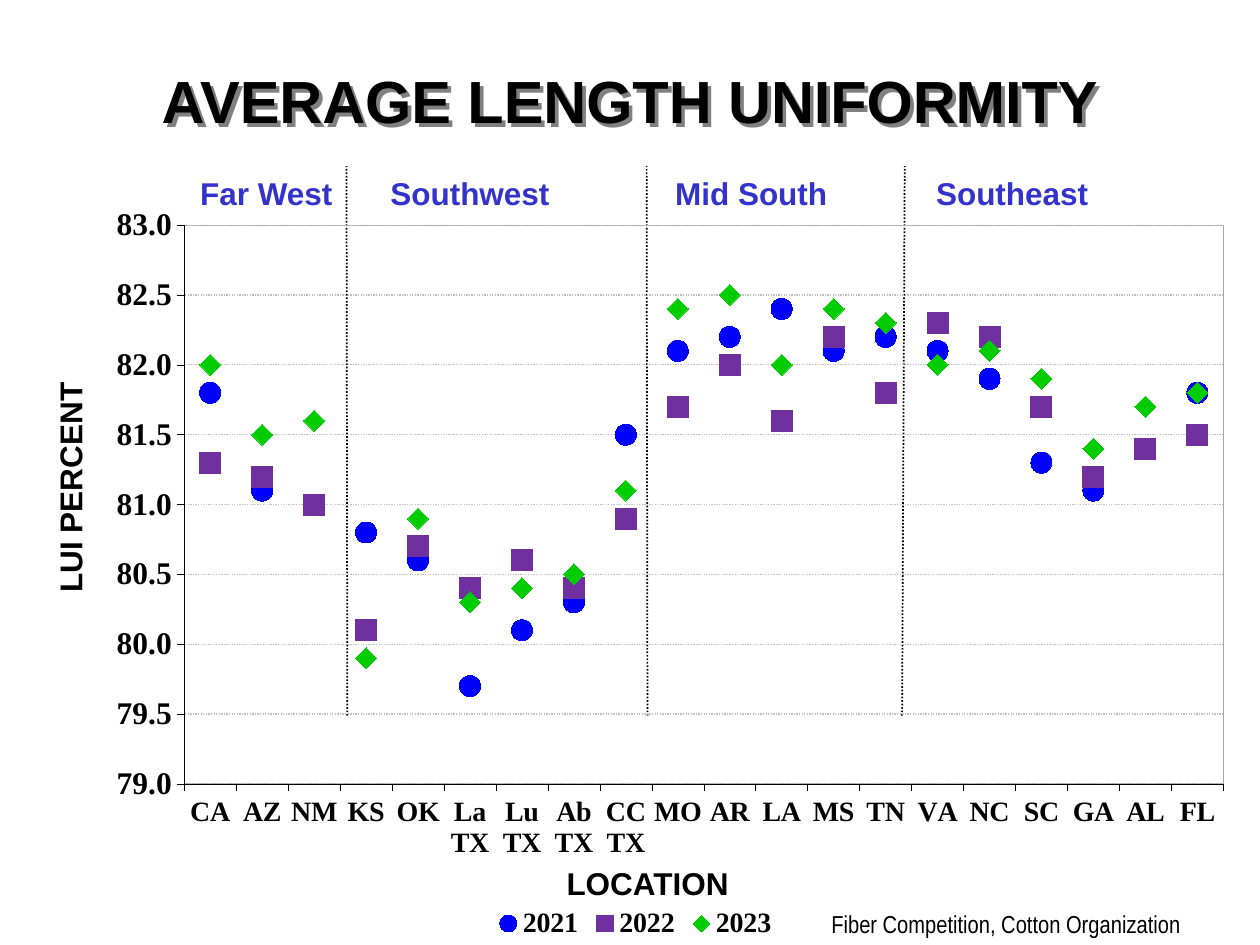
"""Build the average length uniformity slide with its regional marker chart."""
import pptx
import pptx.chart.data
import pptx.dml.color
import pptx.enum.chart
import pptx.enum.dml
import pptx.enum.shapes
import pptx.enum.text
import pptx.oxml
import pptx.util

Pt = pptx.util.Pt
DASH = pptx.enum.dml.MSO_LINE.ROUND_DOT
ALIGN = pptx.enum.text.PP_ALIGN
XL = pptx.enum.chart
NS = ('xmlns:a="http://schemas.openxmlformats.org/drawingml/2006/main" '
      'xmlns:c="http://schemas.openxmlformats.org/drawingml/2006/chart"')

TITLE = "AVERAGE LENGTH UNIFORMITY"
REGIONS = [("Far West", 107.3, 90.7), ("Southwest", 216, 106.6),
           ("Mid South", 378.7, 102.2), ("Southeast", 527.8, 102.2)]
DIVIDERS = [(198.5, 198), (370, 369.5), (515.5, 517)]
AXIS_TITLES = [("LUI PERCENT", -20.2, 267.8, 120.2, 270), ("LOCATION", 323.3, 493.9, 93.6, 0)]
CREDIT = "Fiber Competition, Cotton Organization"
STATES = ["CA", "AZ", "NM", "KS", "OK", "La TX", "Lu TX", "Ab TX", "CC TX", "MO",
          "AR", "LA", "MS", "TN", "VA", "NC", "SC", "GA", "AL", "FL"]
SERIES = [
    ("2021", "CIRCLE", "0000FF",
     [81.8, 81.1, 81, 80.8, 80.6, 79.7, 80.1, 80.3, 81.5, 82.1,
      82.2, 82.4, 82.1, 82.2, 82.1, 81.9, 81.3, 81.1, 81.4, 81.8]),
    ("2022", "SQUARE", "7030A0",
     [81.3, 81.2, 81, 80.1, 80.7, 80.4, 80.6, 80.4, 80.9, 81.7,
      82, 81.6, 82.2, 81.8, 82.3, 82.2, 81.7, 81.2, 81.4, 81.5]),
    ("2023", "DIAMOND", "00CC00",
     [82, 81.5, 81.6, 79.9, 80.9, 80.3, 80.4, 80.5, 81.1, 82.4,
      82.5, 82, 82.4, 82.3, 82, 82.1, 81.9, 81.4, 81.7, 81.8]),
]
PLOT = {"x": 0.114, "y": 0.074, "w": 0.885, "h": 0.719}
LEGEND = {"x": 0.375, "y": 0.945}


def rgb(color):
    return pptx.dml.color.RGBColor.from_string(color)


def xml(text):
    return pptx.oxml.parse_xml(text.replace(">", f" {NS}>", 1))


def set_font(font, size, name, color="000000", bold=True):
    font.size, font.name, font.bold = Pt(size), name, bold
    font.color.rgb = rgb(color)


def set_line(line, color, width, dash=None):
    line.color.rgb = rgb(color)
    line.width = Pt(width)
    if dash:
        line.dash_style = dash


def add_text(slide, text, box, size=18, name="Arial", color="000000",
             bold=True, align=ALIGN.LEFT, wrap=False, inset=True):
    sp = slide.shapes.add_textbox(*map(Pt, box))
    tf = sp.text_frame
    tf.word_wrap = wrap
    if not inset:
        tf.margin_left = tf.margin_right = tf.margin_top = tf.margin_bottom = 0
    p = tf.paragraphs[0]
    p.text, p.alignment = text, align
    set_font(p.font, size, name, color, bold)
    return sp


def add_title(slide):
    sp = slide.shapes.title
    sp.left, sp.top, sp.width, sp.height = Pt(54), Pt(12.2), Pt(612), Pt(90)
    sp.text_frame.vertical_anchor = pptx.enum.text.MSO_ANCHOR.MIDDLE
    p = sp.text_frame.paragraphs[0]
    p.text, p.alignment = TITLE, ALIGN.CENTER
    set_font(p.font, 34, "Arial")
    sp.fill.background()
    sp._element.spPr.append(xml(
        '<a:effectLst><a:outerShdw dist="38100" dir="2700000" algn="tl" rotWithShape="0">'
        '<a:srgbClr val="808080"/></a:outerShdw></a:effectLst>'))


def add_divider(slide, bottom_x, top_x):
    line = slide.shapes.add_connector(pptx.enum.shapes.MSO_CONNECTOR.STRAIGHT,
                                      Pt(bottom_x), Pt(409), Pt(top_x), Pt(95))
    set_line(line.line, "000000", 1, DASH)
    line._element.spPr.append(xml("<a:effectLst></a:effectLst>"))


def format_axes(chart):
    cat, val = chart.category_axis, chart.value_axis
    for axis, size in ((cat, 16), (val, 18)):
        set_font(axis.tick_labels.font, size, "Times New Roman")
        axis.major_tick_mark = XL.XL_TICK_MARK.OUTSIDE
        set_line(axis.format.line, "000000", 0.25)
    val.minimum_scale, val.maximum_scale, val.major_unit = 79, 83, 0.5
    val.tick_labels.number_format = "#,##0.0"
    val.tick_labels.number_format_is_linked = False
    set_line(val.major_gridlines.format.line, "BFBFBF", 0.75, DASH)


def place(element, index, parts, target=""):
    for layout in element.findall(pptx.oxml.ns.qn("c:layout")):
        element.remove(layout)
    modes = "".join(f'<c:{k}Mode val="edge"/>' for k in "xy")
    sizes = "".join(f'<c:{k} val="{v}"/>' for k, v in parts.items())
    element.insert(index, xml(f"<c:layout><c:manualLayout>{target}{modes}{sizes}"
                              "</c:manualLayout></c:layout>"))


def format_areas(chart):
    space = chart._chartSpace
    plot_area = space.chart.plotArea
    place(plot_area, 0, PLOT, '<c:layoutTarget val="inner"/>')
    place(chart.legend._element, 1, LEGEND)
    plot_area.append(xml('<c:spPr><a:noFill/><a:ln w="9525"><a:solidFill>'
                         '<a:srgbClr val="A6A6A6"/></a:solidFill></a:ln></c:spPr>'))
    space.chart.addnext(xml("<c:spPr><a:noFill/><a:ln><a:noFill/></a:ln></c:spPr>"))


def add_chart(slide):
    data = pptx.chart.data.CategoryChartData()
    data.categories = STATES
    for name, _, _, values in SERIES:
        data.add_series(name, values)
    chart = slide.shapes.add_chart(XL.XL_CHART_TYPE.LINE_MARKERS, Pt(28.8), Pt(95.8),
                                   Pt(671), Pt(444.2), data).chart
    set_font(chart.font, 10, "Times New Roman", bold=False)
    chart.has_title = False
    chart.has_legend = True
    chart.legend.position = XL.XL_LEGEND_POSITION.BOTTOM
    chart.legend.include_in_layout = False
    set_font(chart.legend.font, 16, "Times New Roman")
    chart.plots[0].vary_by_categories = False
    for s, (_, marker, color, _) in zip(chart.plots[0].series, SERIES):
        s.smooth = False
        s.format.line.fill.background()
        s.marker.style = XL.XL_MARKER_STYLE[marker]
        s.marker.size = 12
        s.marker.format.fill.solid()
        s.marker.format.fill.fore_color.rgb = rgb(color)
        s.marker.format.line.color.rgb = rgb(color)
    format_axes(chart)
    format_areas(chart)


def main():
    prs = pptx.Presentation()
    prs.slide_width, prs.slide_height = Pt(720), Pt(540)
    slide = prs.slides.add_slide(prs.slide_layouts[5])
    add_title(slide)
    for bottom_x, top_x in DIVIDERS:
        add_divider(slide, bottom_x, top_x)
    for text, left, width in REGIONS:
        add_text(slide, text, (left, 95.8, width, 28.8), color="3333CC")
    for text, left, top, width, angle in AXIS_TITLES:
        sp = add_text(slide, text, (left, top, width, 21.6),
                      align=ALIGN.CENTER, inset=False)
        sp.rotation = angle
    add_text(slide, CREDIT, (468, 516.2, 252, 23.8), 14, "Arial Narrow",
             bold=False, wrap=True)
    add_chart(slide)
    prs.save("out.pptx")


if __name__ == "__main__":
    main()
